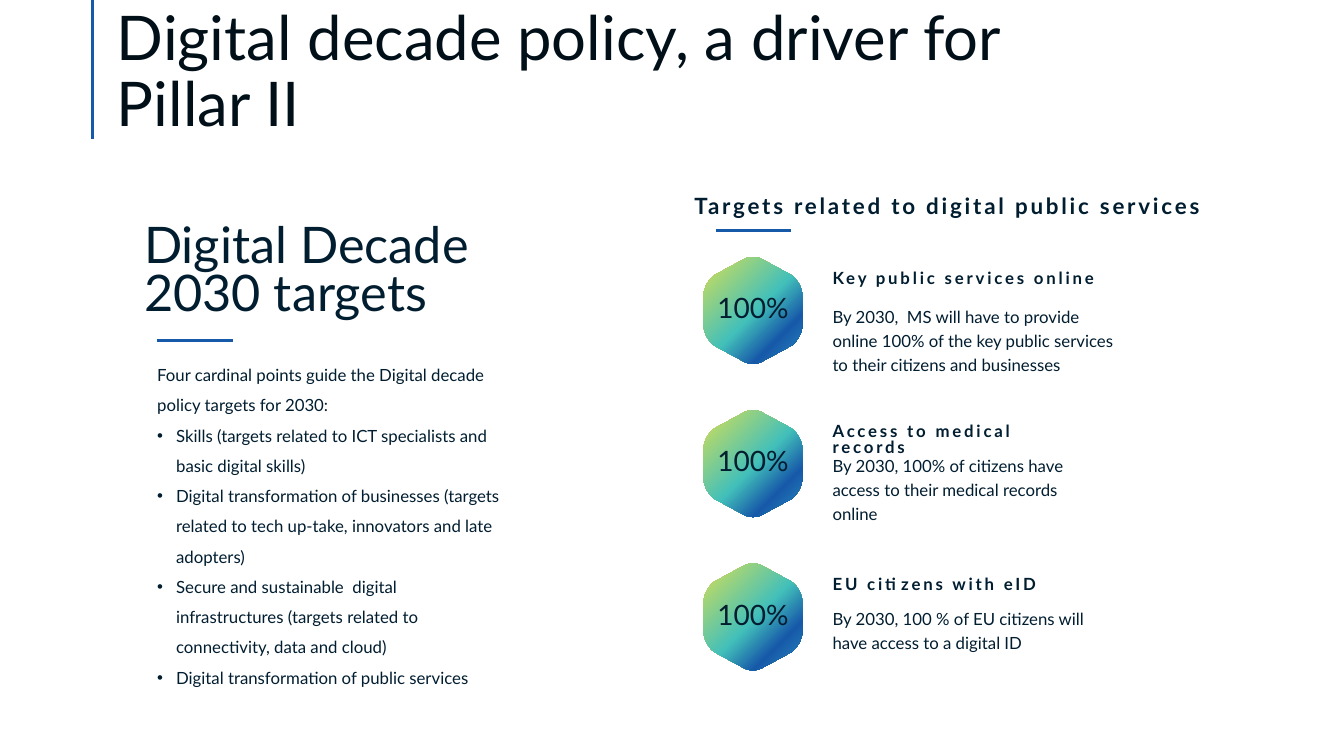
from dataclasses import dataclass

from lxml.etree import SubElement
from pptx import Presentation
from pptx.dml.color import RGBColor
from pptx.enum.shapes import MSO_CONNECTOR
from pptx.enum.text import MSO_ANCHOR, MSO_AUTO_SIZE, PP_ALIGN
from pptx.oxml.ns import qn
from pptx.util import Inches, Pt

COLUMNS, ROWS = 160, 90
CELL = Inches(1) // 12
SLIDE_WIDTH, SLIDE_HEIGHT = COLUMNS * CELL, ROWS * CELL


@dataclass(frozen=True)
class Theme:
    font: str = "Lato"
    title_color: str = "000F18"
    text_color: str = "011D30"
    accent: str = "1759A9"
    gradient: tuple = ((0, "F49222"), (7, "C3DB63"), (52, "43C0BA"),
                       (76, "1759A9"), (100, "288EBF"))
    title_size: int = 44
    heading_size: int = 36
    value_size: int = 20
    subheading_size: int = 16
    body_size: int = 12
    tracking: int = 200
    rule_width: int = 2


@dataclass(frozen=True)
class Box:
    left: float
    top: float
    width: float
    height: float

    def inside(self, left, top, width, height):
        return Box(self.left + left, self.top + top, width, height)

    def emu(self):
        return [round(value * CELL)
                for value in (self.left, self.top, self.width, self.height)]


@dataclass(frozen=True)
class Target:
    heading: str
    text: str
    heading_width: float
    text_top: float
    text_width: float


THEME = Theme()

TARGETS = [
    Target("Key public services online",
           "By 2030,  MS will have to provide online 100% of the key public services "
           "to their citizens and businesses", 34.68, 5.4, 36.48),
    Target("Access to medical records",
           "By 2030, 100% of citizens have access to their medical records online",
           30.72, 4.92, 33.24),
    Target("EU citizens with eID",
           "By 2030, 100 % of EU citizens will have access to a digital ID",
           29.04, 4.92, 33.24),
]

INTRODUCTION = "Four cardinal points guide the Digital decade policy targets for 2030:"
CARDINAL_POINTS = [
    "Skills (targets related to ICT specialists and basic digital skills)",
    "Digital transformation of businesses (targets related to tech up-take, "
    "innovators and late adopters)",
    "Secure and sustainable  digital infrastructures (targets related to "
    "connectivity, data and cloud)",
    "Digital transformation of public services",
]


def prepare_frame(shape, margins=(0, 0, 0, 0), anchor=MSO_ANCHOR.TOP):
    frame = shape.text_frame
    frame.word_wrap = True
    frame.auto_size = MSO_AUTO_SIZE.NONE
    frame.vertical_anchor = anchor
    (frame.margin_left, frame.margin_top,
     frame.margin_right, frame.margin_bottom) = [Inches(margin) for margin in margins]
    return frame


def write(paragraph, text, size, spacing=1.0, bold=False, tracking=0,
          align=PP_ALIGN.LEFT, color=THEME.text_color):
    paragraph.alignment = align
    paragraph.line_spacing = spacing
    run = paragraph.add_run()
    run.text = text
    run.font.name = THEME.font
    run.font.size = Pt(size)
    run.font.bold = bold
    run.font.color.rgb = RGBColor.from_string(color)
    if tracking:
        run.font._element.set("spc", str(tracking))


def add_text(slide, box, text, size, right_margin=0, **style):
    shape = slide.shapes.add_textbox(*box.emu())
    frame = prepare_frame(shape, (0, 0, right_margin, 0))
    write(frame.paragraphs[0], text, size, **style)


def add_rule(slide, box):
    left, top, width, height = box.emu()
    rule = slide.shapes.add_connector(MSO_CONNECTOR.STRAIGHT, left, top,
                                      left + width, top + height)
    rule.line.color.rgb = RGBColor.from_string(THEME.accent)
    rule.line.width = Pt(THEME.rule_width)
    SubElement(rule._element.spPr, qn("a:effectLst"))


def place(shape, box):
    shape.left, shape.top, shape.width, shape.height = box.emu()


def set_bullet(paragraph, indent):
    properties = paragraph._p.get_or_add_pPr()
    properties.set("marL", str(indent))
    properties.set("indent", str(-indent))
    if indent:
        SubElement(properties, qn("a:buFont"), typeface="Arial")
        SubElement(properties, qn("a:buChar"), char="•")
    else:
        SubElement(properties, qn("a:buNone"))


def hexagon_corners():
    shoulder = [(0, 36), (0, 29), (5, 21), (11, 17)]
    peak = [(39, 3), (45, -1), (55, -1), (61, 3)]
    opposite = [(100 - x, y) for x, y in reversed(shoulder)]
    upper = [shoulder, peak, opposite]
    return upper + [[(100 - x, 100 - y) for x, y in corner] for corner in upper]


def add_segment(outline, tag, points):
    segment = SubElement(outline, qn(tag))
    for x, y in points:
        SubElement(segment, qn("a:pt"), x=str(x), y=str(y))


def round_corners(hexagon, corners):
    outline = next(hexagon._element.iter(qn("a:path")))
    for segment in list(outline):
        outline.remove(segment)
    outline.set("w", "100")
    outline.set("h", "100")
    for index, corner in enumerate(corners):
        add_segment(outline, "a:lnTo" if index else "a:moveTo", corner[:1])
        add_segment(outline, "a:cubicBezTo", corner[1:])
    SubElement(outline, qn("a:close"))


def add_hexagon(slide, box, text):
    corners = hexagon_corners()
    vertices = [point for corner in corners for point in (corner[0], corner[-1])]
    builder = slide.shapes.build_freeform(*vertices[0])
    builder.add_line_segments(vertices[1:], close=True)
    hexagon = builder.convert_to_shape()
    round_corners(hexagon, corners)
    place(hexagon, box)
    hexagon.shadow.inherit = False
    hexagon.line.fill.background()
    hexagon.fill.gradient()
    hexagon.fill.gradient_angle = 315
    stops = hexagon._element.spPr.find(qn("a:gradFill")).find(qn("a:gsLst"))
    for stop in list(stops):
        stops.remove(stop)
    for position, color in THEME.gradient:
        stop = SubElement(stops, qn("a:gs"), pos=str(position * 1000))
        SubElement(stop, qn("a:srgbClr"), val=color)
    frame = prepare_frame(hexagon, (0, 0, 0, 0.06), MSO_ANCHOR.MIDDLE)
    write(frame.paragraphs[0], text, THEME.value_size, align=PP_ALIGN.CENTER)


def build_title(slide, box):
    add_rule(slide, box.inside(0, 0, 0, box.height))
    title = slide.shapes.title
    place(title, box.inside(1.68, 6.36, 113.76, 10.32))
    frame = prepare_frame(title, (0.1, 0.05, 0.1, 0), MSO_ANCHOR.BOTTOM)
    write(frame.paragraphs[0], "Digital decade policy, a driver for Pillar II",
          THEME.title_size, spacing=0.9, color=THEME.title_color)


def build_overview(slide, box):
    add_text(slide, box.inside(0, 0, box.width, 11.76), "Digital Decade 2030 targets",
             THEME.heading_size, spacing=0.8)
    add_rule(slide, box.inside(1.56, 13.8, 9, 0))
    body = slide.placeholders[1]
    place(body, box.inside(1.56, 15.48, 42.4, 36))
    frame = prepare_frame(body, (0, 0, 0.1, 0))
    for index, text in enumerate([INTRODUCTION, *CARDINAL_POINTS]):
        paragraph = frame.add_paragraph() if index else frame.paragraphs[0]
        set_bullet(paragraph, Pt(13.5) if index else 0)
        paragraph.space_before = Pt(0)
        write(paragraph, text, THEME.body_size, spacing=1.5)


def build_target(slide, box, target):
    add_hexagon(slide, box.inside(0, 0, 11.76, 12.72), "100%")
    add_text(slide, box.inside(15.36, 1.68, target.heading_width, 2.04), target.heading,
             THEME.body_size, spacing=0.8, bold=True, tracking=THEME.tracking)
    add_text(slide, box.inside(15.36, target.text_top, target.text_width, 8.5),
             target.text, THEME.body_size, right_margin=0.1, spacing=1.2)


def build_targets(slide, box):
    add_text(slide, box.inside(0, 0, box.width, 3),
             "Targets related to digital public services", THEME.subheading_size,
             spacing=0.9, bold=True, tracking=THEME.tracking, align=PP_ALIGN.CENTER)
    add_rule(slide, box.inside(6.24, 4.2, 9, 0))
    pitch = 18.24
    for index, target in enumerate(TARGETS):
        row = box.inside(4.8, 7.32 + index * pitch, box.width - 4.8, pitch)
        build_target(slide, row, target)


def main():
    presentation = Presentation()
    presentation.slide_width, presentation.slide_height = SLIDE_WIDTH, SLIDE_HEIGHT
    slide = presentation.slides.add_slide(presentation.slide_layouts[1])
    build_title(slide, Box(11.04, 0, 116, 16.56))
    build_overview(slide, Box(17.16, 26.76, 53.04, 55))
    build_targets(slide, Box(78.96, 23.28, 67.68, 62))
    presentation.save("out.pptx")


if __name__ == "__main__":
    main()
